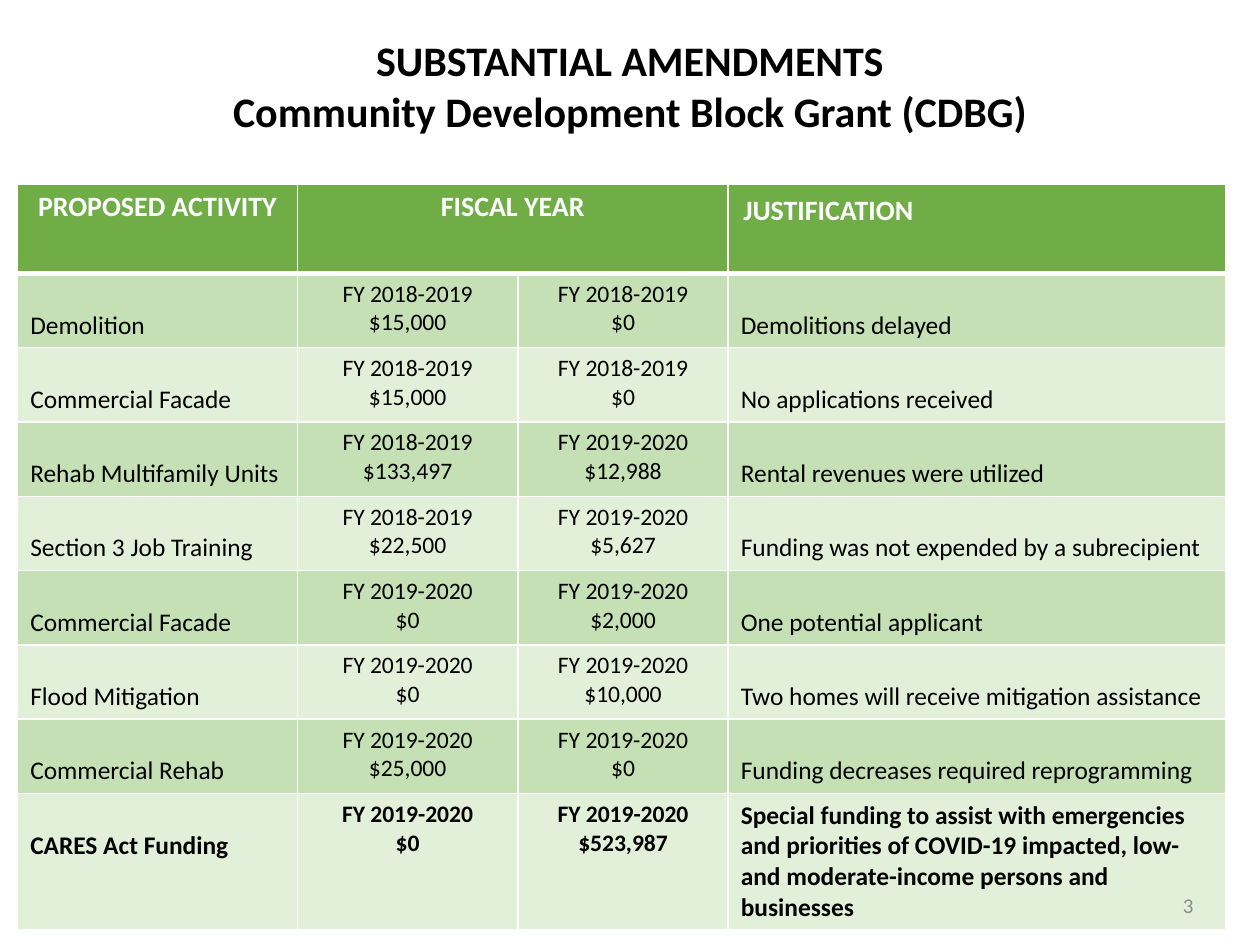
"""Build the slide listing substantial amendments to the block grant."""
from dataclasses import dataclass

from pptx import Presentation
from pptx.dml.color import RGBColor as Color
from pptx.enum.text import MSO_ANCHOR as Anchor, PP_ALIGN as Align
from pptx.oxml import parse_xml
from pptx.oxml.ns import nsdecls
from pptx.util import Inches, Pt

COLORS = {"header": "70AD47", "dark": "C5E0B4", "light": "E2F0D9",
          "white": "FFFFFF", "black": "000000", "number": "8C8C8C"}
GRID_COLUMNS, GRID_ROWS = 100, 75
SLIDE_WIDTH, SLIDE_HEIGHT = Inches(10), Inches(7.5)
COLUMN_SPANS = (22.2, 17.5, 16.7, 39.5)
HEADER_SPAN, BODY_SPAN, LAST_SPAN = 7.1, 5.9, 10.8
TOP_MARGIN, LOWERED_MARGIN, HEADER_MARGIN = 0.5, 2.9, 0.8


@dataclass(frozen=True)
class Frame:
    """A rectangle in grid columns and rows."""
    left: float
    top: float
    width: float
    height: float


@dataclass(frozen=True)
class Style:
    """The look of a piece of text."""
    size: float
    color: str = "black"
    bold: bool = False
    align: Align = Align.LEFT


@dataclass(frozen=True)
class Amendment:
    """One proposed activity with its budgets before and after."""
    activity: str
    before: str
    after: str
    justification: str
    bold: bool = False


AMENDMENTS = (
    Amendment("Demolition", "FY 2018-2019\n$15,000", "FY 2018-2019\n$0", "Demolitions delayed"),
    Amendment("Commercial Facade", "FY 2018-2019\n$15,000", "FY 2018-2019\n$0",
              "No applications received"),
    Amendment("Rehab Multifamily Units", "FY 2018-2019\n$133,497", "FY 2019-2020\n$12,988",
              "Rental revenues were utilized"),
    Amendment("Section 3 Job Training", "FY 2018-2019\n$22,500", "FY 2019-2020\n$5,627",
              "Funding was not expended by a subrecipient"),
    Amendment("Commercial Facade", "FY 2019-2020\n$0", "FY 2019-2020\n$2,000",
              "One potential applicant"),
    Amendment("Flood Mitigation", "FY 2019-2020\n$0", "FY 2019-2020\n$10,000",
              "Two homes will receive mitigation assistance"),
    Amendment("Commercial Rehab", "FY 2019-2020\n$25,000", "FY 2019-2020\n$0",
              "Funding decreases required reprogramming"),
    Amendment("CARES Act Funding", "FY 2019-2020\n$0", "FY 2019-2020\n$523,987",
              "Special funding to assist with emergencies and priorities of COVID-19 impacted, "
              "low-and moderate-income persons and businesses", bold=True),
)


def across(columns: float) -> int:
    """Return the length of a number of grid columns."""
    return round(SLIDE_WIDTH * columns / GRID_COLUMNS)


def down(rows: float) -> int:
    """Return the length of a number of grid rows."""
    return round(SLIDE_HEIGHT * rows / GRID_ROWS)


def place(frame: Frame) -> tuple[int, int, int, int]:
    """Convert a frame to slide lengths."""
    return across(frame.left), down(frame.top), across(frame.width), down(frame.height)


def write(text_frame, text: str, style: Style) -> None:
    """Write text, one paragraph a line, in the given style."""
    text_frame.text = text
    formats = {"name": "Calibri", "size": Pt(style.size), "bold": style.bold}
    for paragraph in text_frame.paragraphs:
        paragraph.alignment = style.align
        for run in paragraph.runs:
            for name, value in formats.items():
                setattr(run.font, name, value)
            run.font.color.rgb = Color.from_string(COLORS[style.color])


def draw_cell(cell, text: str, style: Style, fill: str, margin: float = TOP_MARGIN,
              top_line: float = 1, bottom_line: float = 1) -> None:
    """Fill one table cell with text, colour and white borders."""
    write(cell.text_frame, text, style)
    cell.margin_top = down(margin)
    properties = cell._tc.get_or_add_tcPr()
    for side, points in {"L": 1, "R": 1, "T": top_line, "B": bottom_line}.items():
        properties.append(parse_xml(
            f'<a:ln{side} {nsdecls("a")} w="{Pt(points)}"><a:solidFill>'
            f'<a:srgbClr val="{COLORS["white"]}"/></a:solidFill></a:ln{side}>'))
    cell.fill.solid()
    cell.fill.fore_color.rgb = Color.from_string(COLORS[fill])


def draw_header(table) -> None:
    """Draw the header row with its merged fiscal year cell."""
    table.cell(0, 1).merge(table.cell(0, 2))
    headings = (("PROPOSED ACTIVITY", Align.CENTER, TOP_MARGIN),
                ("FISCAL YEAR", Align.CENTER, TOP_MARGIN),
                ("", Align.CENTER, TOP_MARGIN),
                ("JUSTIFICATION", Align.LEFT, HEADER_MARGIN))
    for column, (text, align, margin) in enumerate(headings):
        draw_cell(table.cell(0, column), text, Style(16, "white", True, align),
                  "header", margin, bottom_line=3)
    table.cell(0, 3).margin_left = across(1.2)


def draw_amendment(table, row: int, amendment: Amendment) -> None:
    """Draw one amendment as a table row."""
    label = Style(14.5, bold=amendment.bold)
    budget = Style(13.5, bold=amendment.bold, align=Align.CENTER)
    reason_margin = TOP_MARGIN if amendment.bold else LOWERED_MARGIN
    cells = ((amendment.activity, label, LOWERED_MARGIN),
             (amendment.before, budget, TOP_MARGIN),
             (amendment.after, budget, TOP_MARGIN),
             (amendment.justification, label, reason_margin))
    for column, (text, style, margin) in enumerate(cells):
        draw_cell(table.cell(row, column), text, style, "dark" if row % 2 else "light",
                  margin, top_line=3 if row == 1 else 1)


def draw_table(slide) -> None:
    """Draw the table of amendments."""
    row_spans = (HEADER_SPAN, *[BODY_SPAN] * (len(AMENDMENTS) - 1), LAST_SPAN)
    frame = Frame(1.4, 14.6, sum(COLUMN_SPANS), sum(row_spans))
    table = slide.shapes.add_table(len(row_spans), len(COLUMN_SPANS), *place(frame)).table
    for column, span in zip(table.columns, COLUMN_SPANS):
        column.width = across(span)
    for row, span in zip(table.rows, row_spans):
        row.height = down(span)
    draw_header(table)
    for row, amendment in enumerate(AMENDMENTS, start=1):
        draw_amendment(table, row, amendment)


def draw_title(slide) -> None:
    """Place and format the title."""
    title = slide.shapes.title
    title.left, title.top, title.width, title.height = place(Frame(0, 2.2, 100, 9.1))
    title.fill.solid()
    title.fill.fore_color.rgb = Color.from_string(COLORS["white"])
    title.text_frame.vertical_anchor = Anchor.MIDDLE
    write(title.text_frame, "SUBSTANTIAL AMENDMENTS\nCommunity Development Block Grant (CDBG)",
          Style(24, bold=True, align=Align.CENTER))


def draw_page_number(slide) -> None:
    """Draw the page number at the lower right."""
    box = slide.shapes.add_textbox(*place(Frame(89.4, 69.8, 6.3, 4)))
    box.text_frame.word_wrap = True
    box.text_frame.vertical_anchor = Anchor.MIDDLE
    write(box.text_frame, "3", Style(12, "number", align=Align.RIGHT))


def main() -> None:
    """Build and save the presentation."""
    presentation = Presentation()
    presentation.slide_width, presentation.slide_height = SLIDE_WIDTH, SLIDE_HEIGHT
    slide = presentation.slides.add_slide(presentation.slide_layouts.get_by_name("Title Only"))
    draw_title(slide)
    draw_table(slide)
    draw_page_number(slide)
    presentation.save("out.pptx")


if __name__ == "__main__":
    main()
